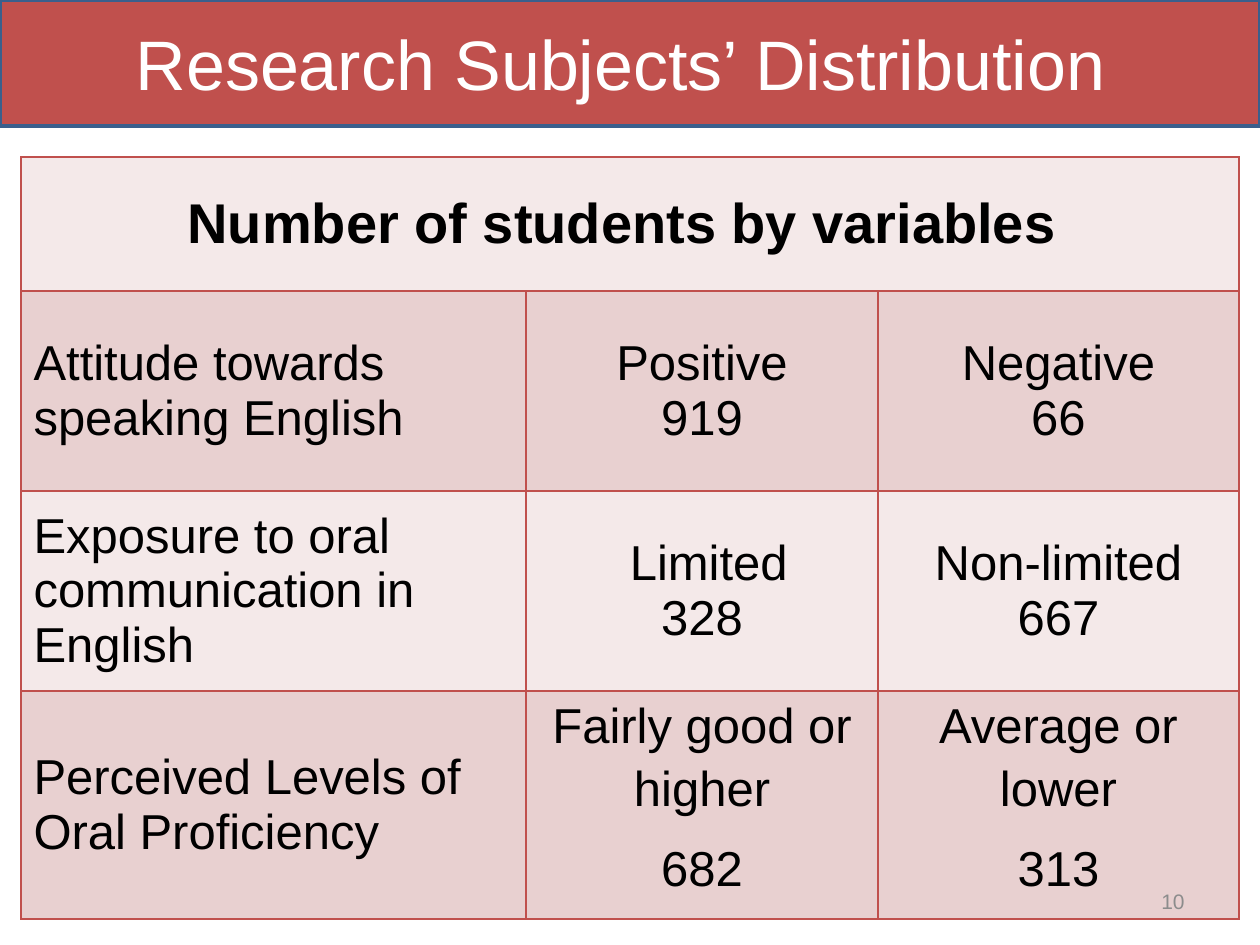
from lxml import etree
from pptx import Presentation
from pptx.dml.color import RGBColor
from pptx.enum.shapes import MSO_SHAPE as SHAPE
from pptx.enum.text import MSO_ANCHOR as ANCHOR, PP_ALIGN as ALIGN
from pptx.oxml.ns import qn
from pptx.util import Pt

PX = 914400 / 126
RED, BLUE, WHITE, BLACK, GREY = "C0504D", "3A5F8C", "FFFFFF", "000000", "8C8C8C"
BANDS = ["F4E9E9", "E8D0D0"]
COLS = [505, 352, 361]
ROWS = [134, 200, 200, 228]
HEADING = "Number of students by variables "
SUBJECTS = [
    ("Attitude towards speaking English", "Positive\n919", "Negative\n66"),
    ("Exposure to oral communication in English", " Limited\n328", "Non-limited\n667"),
    ("Perceived Levels of Oral Proficiency", "Fairly good or higher\n682",
     "Average or lower\n313"),
]


def px(n):
    return round(n * PX)


def rgb(value):
    return RGBColor.from_string(value)


def write(tf, text, size, color, align, bold=False):
    tf.text = text
    tf.word_wrap = True
    for p in tf.paragraphs:
        p.alignment = align
        for r in p.runs:
            r.font.name = "Arial"
            r.font.size = Pt(size)
            r.font.bold = bold
            r.font.color.rgb = rgb(color)


def border(cell, color, width):
    tcPr = cell._tc.get_or_add_tcPr()
    for i, side in enumerate(("lnL", "lnR", "lnT", "lnB")):
        ln = etree.Element(qn(f"a:{side}"), w=str(Pt(width)))
        fill = etree.SubElement(ln, qn("a:solidFill"))
        etree.SubElement(fill, qn("a:srgbClr"), val=color)
        tcPr.insert(i, ln)


def add_title(slide, x, y, w, h):
    sp = slide.shapes.add_shape(SHAPE.RECTANGLE, px(x), px(y), px(w), px(h))
    sp.shadow.inherit = False
    sp.fill.solid()
    sp.fill.fore_color.rgb = rgb(RED)
    sp.line.color.rgb = rgb(BLUE)
    sp.line.width = Pt(2)
    tf = sp.text_frame
    tf.vertical_anchor = ANCHOR.MIDDLE
    write(tf, "Research Subjects’ Distribution ", 40, WHITE, ALIGN.CENTER)


def loosen(cell):
    cell.vertical_anchor = ANCHOR.TOP
    cell.margin_left = cell.margin_right = px(15)
    cell.margin_top = cell.margin_bottom = 0
    for p in cell.text_frame.paragraphs:
        p.line_spacing = 1.15
        p.space_after = Pt(10)


def add_subjects(slide, x, y):
    table = slide.shapes.add_table(len(ROWS), len(COLS), px(x), px(y),
                                   px(sum(COLS)), px(sum(ROWS))).table
    for col, w in zip(table.columns, COLS):
        col.width = px(w)
    for i, (row, h) in enumerate(zip(table.rows, ROWS)):
        row.height = px(h)
        for cell in row.cells:
            cell.fill.solid()
            cell.fill.fore_color.rgb = rgb(BANDS[i % 2])
            cell.vertical_anchor = ANCHOR.MIDDLE
            border(cell, RED, 1)
    head = table.cell(0, 0)
    head.merge(table.cell(0, len(COLS) - 1))
    write(head.text_frame, HEADING, 32, BLACK, ALIGN.CENTER, True)
    for i, texts in enumerate(SUBJECTS, 1):
        for j, text in enumerate(texts):
            align = ALIGN.CENTER if j else ALIGN.LEFT
            write(table.cell(i, j).text_frame, text, 28, BLACK, align)
    for j in (1, 2):
        loosen(table.cell(len(SUBJECTS), j))


def add_page_number(slide, x, y, w, h):
    tf = slide.shapes.add_textbox(px(x), px(y), px(w), px(h)).text_frame
    tf.vertical_anchor = ANCHOR.MIDDLE
    write(tf, "10", 12, GREY, ALIGN.RIGHT)


def main():
    prs = Presentation()
    prs.slide_width, prs.slide_height = px(1260), px(945)
    slide = prs.slides.add_slide(prs.slide_layouts[6])
    add_subjects(slide, 21, 157)
    add_page_number(slide, 903, 876, 294, 50)
    add_title(slide, 0, 0, 1260, 126)
    prs.save("out.pptx")


if __name__ == "__main__":
    main()
